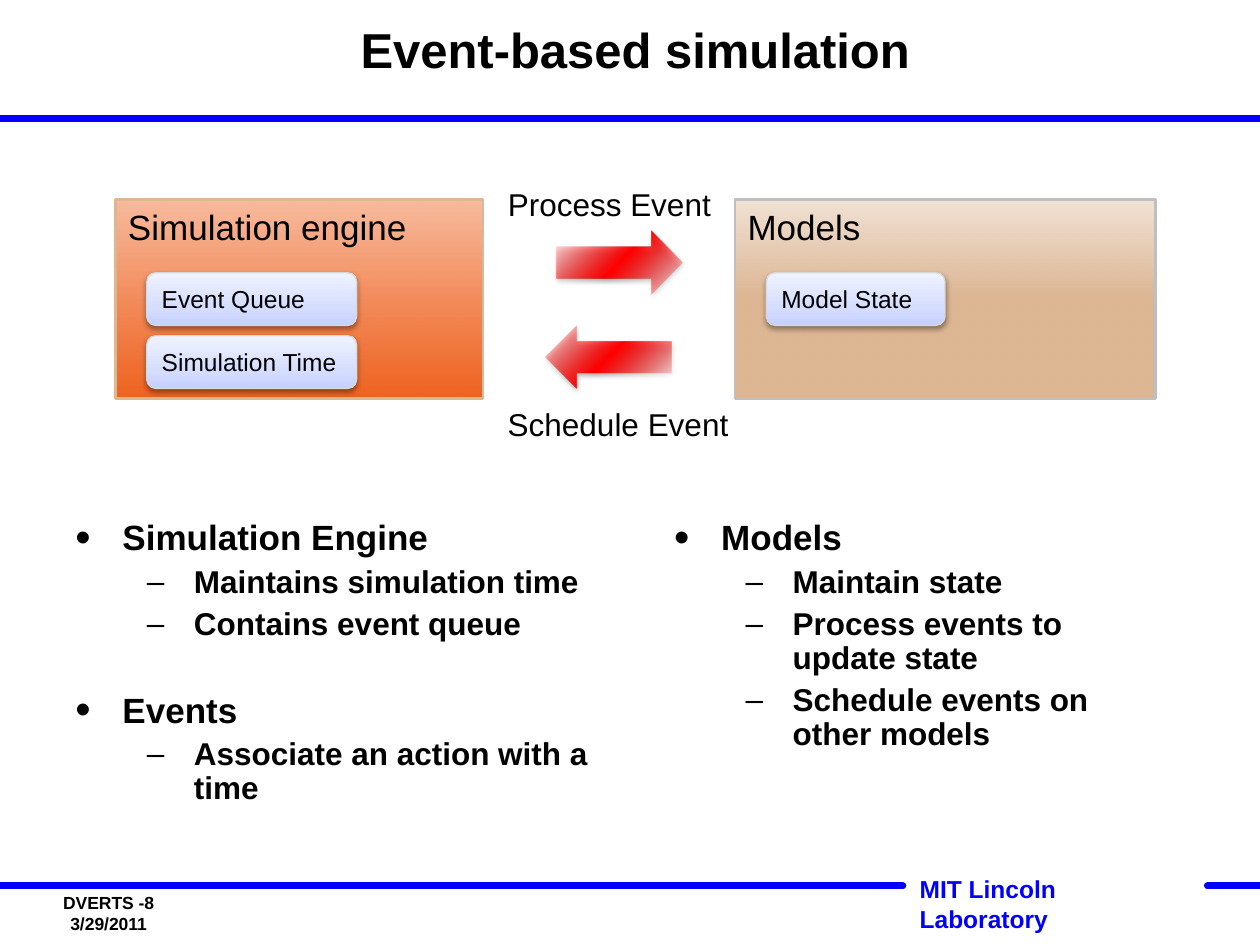
from lxml.etree import SubElement
from pptx import Presentation
from pptx.dml.color import RGBColor
from pptx.enum.shapes import MSO_CONNECTOR, MSO_SHAPE
from pptx.enum.text import MSO_ANCHOR, PP_ALIGN
from pptx.oxml import parse_xml
from pptx.oxml.ns import nsdecls, qn
from pptx.util import Cm, Pt

FONT = "Arial"
COLORS = {"ink": "000000", "rule": "0000FF", "tan": "DDB694", "grey": "BFBFBF",
          "pale": "D9D9D9"}

# Gradients: angle, then stops of position %, colour, opacity %
GRADIENTS = {
    "engine": (90, [(0, "EF6321", 43), (50, "EF6321", 73), (100, "EF6321", 100)]),
    "models": (90, [(0, "DDB694", 39), (50, "DDB694", 100), (100, "DDB694", 100)]),
    "part": (270, [(0, "C4D0FF", 100), (35, "D6DEFF", 100), (100, "EFF2FF", 100)]),
    "arrow": (45, [(0, "FF0000", 0), (50, "FF0000", 100), (100, "FF0000", 0)]),
}

# Content; lengths in cm
TITLE = "Event-based simulation"
RULES = [(0, 25.4, 2.38), (0, 18.2, 17.86), (24.34, 25.4, 17.86)]  # from, to, y
BLOCKS = [  # name, left, width, gradient, outline, part width, parts
    ("Simulation engine", 2.33, 7.41, "engine", "tan", 4.23,
     ["Event Queue", "Simulation Time"]),
    ("Models", 14.82, 8.47, "models", "grey", 3.6, ["Model State"]),
]
ARROWS = [  # label, label top, label width, arrow left, arrow top, rotation
    ("Process Event", 3.6, 4.65, 11.22, 4.66, 0),
    ("Schedule Event", 8.04, 5.0, 11.0, 6.56, 180),
]
COLUMNS = [  # left, width, sections
    (1.27, 11.0, [
        ("Simulation Engine", ["Maintains simulation time", "Contains event queue"]),
        ("Events", ["Associate an action with a time"]),
    ]),
    (13.34, 10.3, [
        ("Models", ["Maintain state", "Process events to update state",
                    "Schedule events on other models"]),
    ]),
]
FOOTER = ["DVERTS -8", "3/29/2011"]
LABORATORY = "MIT Lincoln Laboratory"

BLOCK_TOP, BLOCK_HEIGHT = 4.02, 4.02
PART_INSET, PART_TOP, PART_HEIGHT, PART_STEP = 0.63, 5.5, 1.06, 1.27
# Bullet levels: mark, mark size %, text size, left indent, first-line indent
LEVELS = [("•", 125, 20, 0.95, -0.95), ("–", 100, 18, 2.39, -0.95)]
SECTION_GAP = 29

presentation = Presentation()
presentation.slide_width, presentation.slide_height = Cm(25.4), Cm(19.05)
slide = presentation.slides.add_slide(presentation.slide_layouts[6])


def color(name):
    return RGBColor.from_string(COLORS[name])


def add_run(paragraph, text, size, bold=False, ink="ink"):
    run = paragraph.add_run()
    run.text = text
    run.font.name, run.font.size, run.font.bold = FONT, Pt(size), bold
    run.font.color.rgb = color(ink)


def add_text(left, top, width, height, lines, size, bold=False, ink="ink",
             align=PP_ALIGN.LEFT, anchor=MSO_ANCHOR.TOP, wrap=True):
    box = slide.shapes.add_textbox(Cm(left), Cm(top), Cm(width), Cm(height))
    frame = box.text_frame
    frame.word_wrap, frame.vertical_anchor = wrap, anchor
    for index, line in enumerate(lines):
        paragraph = frame.add_paragraph() if index else frame.paragraphs[0]
        paragraph.alignment = align
        add_run(paragraph, line, size, bold, ink)
    return frame


def add_shape(kind, left, top, width, height, gradient, outline=None, line_width=0):
    shape = slide.shapes.add_shape(kind, Cm(left), Cm(top), Cm(width), Cm(height))
    shape.shadow.inherit = False
    angle, stops = GRADIENTS[gradient]
    stop_xml = "".join(
        f'<a:gs pos="{position * 1000}"><a:srgbClr val="{value}">'
        f'<a:alpha val="{opacity * 1000}"/></a:srgbClr></a:gs>'
        for position, value, opacity in stops)
    shape._element.spPr.find(qn("a:prstGeom")).addnext(parse_xml(
        f'<a:gradFill {nsdecls("a")} rotWithShape="1"><a:gsLst>{stop_xml}</a:gsLst>'
        f'<a:lin ang="{angle * 60000}" scaled="0"/></a:gradFill>'))
    if outline:
        shape.line.color.rgb = color(outline)
        shape.line.width = Pt(line_width)
    else:
        shape.line.fill.background()
    return shape


def add_shadow(shape):
    shape._element.spPr.find(qn("a:effectLst")).append(parse_xml(
        f'<a:outerShdw {nsdecls("a")} blurRad="40000" dist="20000" dir="5400000" '
        'rotWithShape="0"><a:srgbClr val="000000"><a:alpha val="38000"/>'
        '</a:srgbClr></a:outerShdw>'))


def label_shape(shape, text, size, anchor):
    shape.text_frame.vertical_anchor = anchor
    paragraph = shape.text_frame.paragraphs[0]
    paragraph.alignment = PP_ALIGN.LEFT
    add_run(paragraph, text, size)


def add_bullet(frame, text, level, space_before):
    mark, mark_size, size, indent, first_line = LEVELS[level]
    paragraph = frame.add_paragraph() if frame.text else frame.paragraphs[0]
    paragraph.level = level
    paragraph.line_spacing = 0.9
    paragraph.space_before = Pt(space_before)
    properties = paragraph._p.get_or_add_pPr()
    properties.set("marL", str(Cm(indent)))
    properties.set("indent", str(Cm(first_line)))
    SubElement(properties, qn("a:buSzPct")).set("val", str(mark_size * 1000))
    SubElement(properties, qn("a:buFont")).set("typeface", FONT)
    SubElement(properties, qn("a:buChar")).set("char", mark)
    add_run(paragraph, text, size, bold=True)


# Header and footer rules
for start, end, y in RULES:
    rule = slide.shapes.add_connector(MSO_CONNECTOR.STRAIGHT,
                                      Cm(start), Cm(y), Cm(end), Cm(y))
    rule.line.color.rgb, rule.line.width = color("rule"), Pt(4)
    rule.line._get_or_add_ln().set("cap", "rnd")
    SubElement(rule._element.spPr, qn("a:effectLst"))

# Title and footer
title = add_text(2.96, 0, 19.69, 2.12, [TITLE], 28, bold=True,
                 align=PP_ALIGN.CENTER, anchor=MSO_ANCHOR.MIDDLE)
title.paragraphs[0].line_spacing = Pt(30)
add_text(18.29, 17.5, 5.6, 1.4, [LABORATORY], 14, bold=True, ink="rule")
add_text(0.69, 17.78, 3, 1.27, FOOTER, 10, bold=True, align=PP_ALIGN.CENTER,
         anchor=MSO_ANCHOR.MIDDLE)

# Diagram blocks with their parts
for name, left, width, gradient, outline, part_width, parts in BLOCKS:
    block = add_shape(MSO_SHAPE.RECTANGLE, left, BLOCK_TOP, width, BLOCK_HEIGHT,
                      gradient, outline, 1.5)
    label_shape(block, name, 20, MSO_ANCHOR.TOP)
    for row, part_name in enumerate(parts):
        part = add_shape(MSO_SHAPE.ROUNDED_RECTANGLE, left + PART_INSET,
                         PART_TOP + row * PART_STEP, part_width, PART_HEIGHT,
                         "part", "pale", 0.75)
        add_shadow(part)
        label_shape(part, part_name, 14, MSO_ANCHOR.MIDDLE)

# Arrows between the blocks
for label, label_top, label_width, left, top, rotation in ARROWS:
    arrow = add_shape(MSO_SHAPE.RIGHT_ARROW, left, top, 2.54, 1.27, "arrow")
    arrow.rotation = rotation
    add_shadow(arrow)
    add_text(9.96, label_top, label_width, 1.03, [label], 18,
             align=PP_ALIGN.CENTER, wrap=False)

# Bullet columns
for left, width, sections in COLUMNS:
    column = add_text(left, 10.37, width, 7.2, [], 18)
    for number, (heading, points) in enumerate(sections):
        add_bullet(column, heading, 0, SECTION_GAP if number else 0)
        for point in points:
            add_bullet(column, point, 1, 4.5)

presentation.save("out.pptx")
